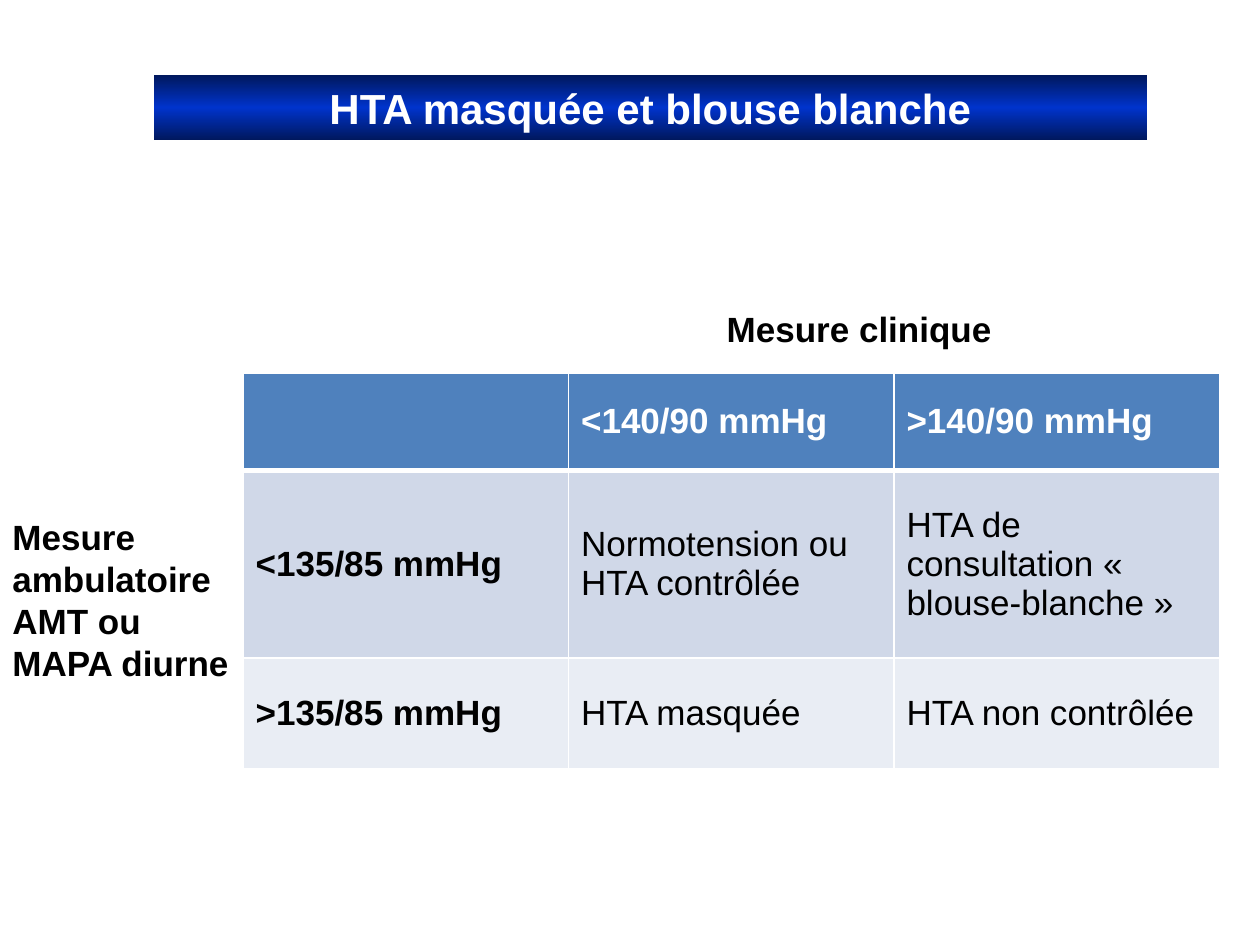
from copy import deepcopy

from lxml.etree import SubElement
from pptx import Presentation
from pptx.dml.color import RGBColor
from pptx.enum.text import MSO_ANCHOR as Anchor, MSO_AUTO_SIZE as AutoSize, PP_ALIGN as Align
from pptx.oxml.ns import qn
from pptx.util import Cm, Pt

COLORS = {
    "white": "FFFFFF", "black": "000000",
    "navy": "00185E", "blue": "0033CC",
    "header": "4F81BD", "odd": "D0D8E8", "even": "E9EDF4",
}
ROWS = [
    ["", "<140/90 mmHg", ">140/90 mmHg"],
    ["<135/85 mmHg", "Normotension ou HTA contrôlée", "HTA de consultation « blouse-blanche »"],
    [">135/85 mmHg", "HTA masquée", "HTA non contrôlée"],
]
ROW_HEIGHTS = [1.96, 3.78, 2.24]


def rgb(name):
    return RGBColor.from_string(COLORS[name])


def add_run(p, text, size=20, color="black", bold=True):
    r = p.add_run()
    r.text = text
    r.font.name = "Arial"
    r.font.size = Pt(size)
    r.font.bold = bold
    r.font.color.rgb = rgb(color)


def place(sp, left, top, width, height):
    sp.left, sp.top, sp.width, sp.height = Cm(left), Cm(top), Cm(width), Cm(height)


def fill_banner(sp):
    """Vertical gradient: navy at both edges, blue in the middle."""
    sp.fill.gradient()
    sp.fill.gradient_angle = 270
    first, last = sp.fill.gradient_stops
    first.color.rgb, first.position = rgb("navy"), 0
    last.color.rgb, last.position = rgb("navy"), 1
    stops = sp.fill._fill._gradFill.find(qn("a:gsLst"))
    stops.insert(1, deepcopy(stops[0]))
    middle = sp.fill.gradient_stops[1]
    middle.color.rgb, middle.position = rgb("blue"), 0.5


def add_title(s, left, top, width, height):
    sp = s.shapes.title
    place(sp, left, top, width, height)
    fill_banner(sp)
    tf = sp.text_frame
    tf.auto_size = AutoSize.NONE
    tf.vertical_anchor = Anchor.MIDDLE
    p = tf.paragraphs[0]
    p.alignment = Align.CENTER
    add_run(p, "HTA masquée et blouse blanche", 24, "white")


def add_label(s, lines, left, top, width, height):
    sp = s.shapes.add_textbox(Cm(left), Cm(top), Cm(width), Cm(height))
    tf = sp.text_frame
    tf.word_wrap = True
    p = tf.paragraphs[0]
    for i, line in enumerate(lines):
        if i:
            p.add_line_break()
        add_run(p, line)


def set_borders(cell, top, bottom):
    tc_pr = cell._tc.get_or_add_tcPr()
    for side, width in (("L", 1), ("R", 1), ("T", top), ("B", bottom)):
        ln = SubElement(tc_pr, qn(f"a:ln{side}"), w=str(Pt(width)))
        SubElement(SubElement(ln, qn("a:solidFill")), qn("a:srgbClr"), val=COLORS["white"])


def add_bp_table(s, left, top, width):
    """Ambulatory readings in rows against clinic readings in columns."""
    n_cols = len(ROWS[0])
    table = s.shapes.add_table(len(ROWS), n_cols, Cm(left), Cm(top),
                               Cm(width), Cm(sum(ROW_HEIGHTS))).table
    for col in table.columns:
        col.width = Cm(width / n_cols)
    for i, (texts, height, fill) in enumerate(zip(ROWS, ROW_HEIGHTS, ("header", "odd", "even"))):
        table.rows[i].height = Cm(height)
        for j, text in enumerate(texts):
            cell = table.cell(i, j)
            set_borders(cell, top=3 if i == 1 else 1, bottom=3 if i == 0 else 1)
            cell.fill.solid()
            cell.fill.fore_color.rgb = rgb(fill)
            cell.vertical_anchor = Anchor.MIDDLE
            if text:
                add_run(cell.text_frame.paragraphs[0], text,
                        color="black" if i else "white", bold=i == 0 or j == 0)


def main():
    prs = Presentation()
    prs.slide_width, prs.slide_height = Cm(25.4), Cm(19.05)
    s = prs.slides.add_slide(prs.slide_layouts[5])
    add_title(s, 3.1, 1.52, 20.02, 1.3)
    add_bp_table(s, 4.9, 7.52, 19.68)
    add_label(s, ["Mesure clinique"], 14.4, 6.07, 11, 1.12)
    add_label(s, ["Mesure ambulatoire AMT ou", "MAPA diurne"], 0, 10.26, 4.9, 3.68)
    prs.save("out.pptx")


if __name__ == "__main__":
    main()
